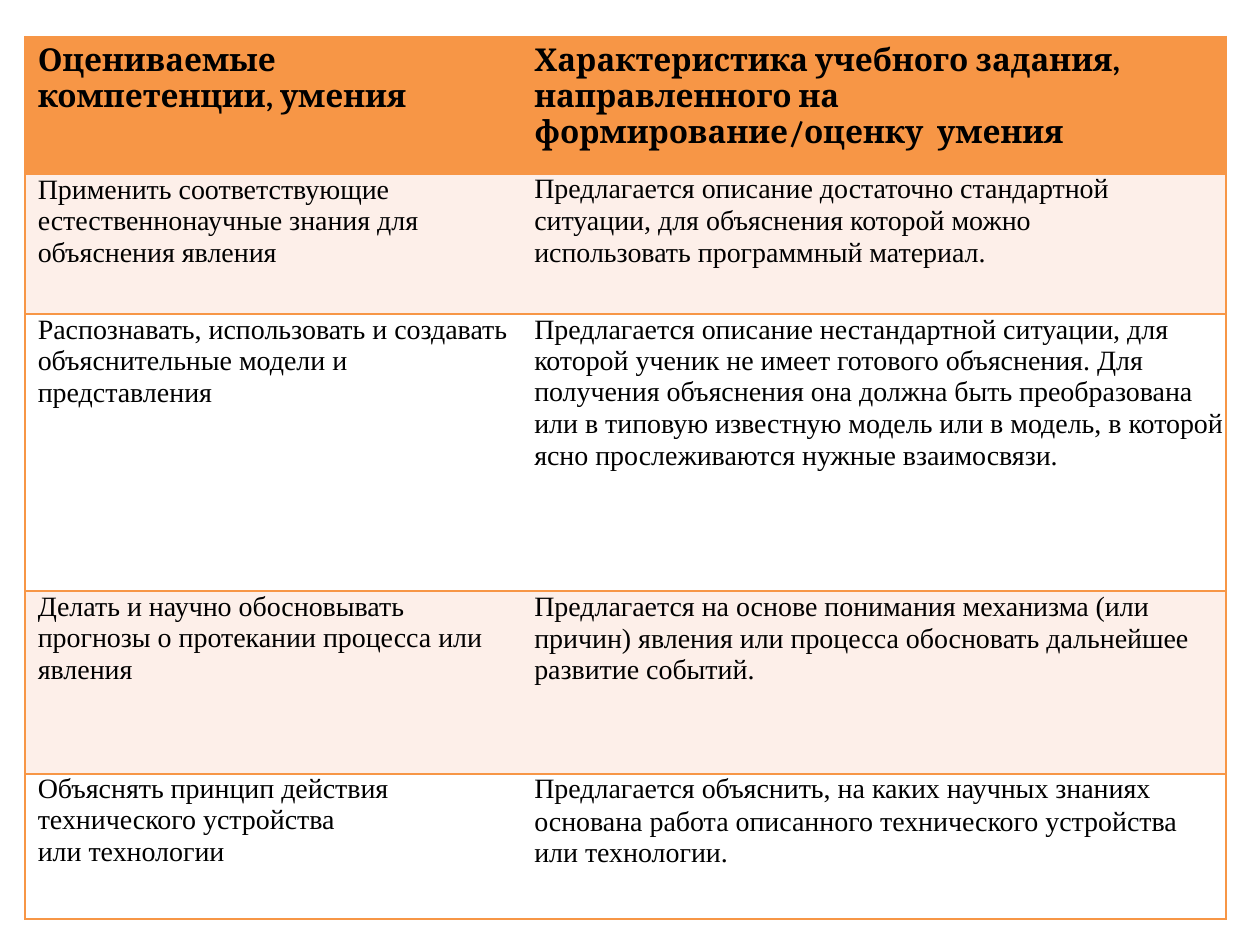
from lxml import etree
from pptx import Presentation
from pptx.dml.color import RGBColor
from pptx.enum.text import MSO_ANCHOR
from pptx.oxml.ns import qn
from pptx.util import Pt

TOP = MSO_ANCHOR.TOP

# Content: each cell is a list of (text, space before, line spacing)
HEAD = ["Оцениваемые компетенции, умения",
        "Характеристика учебного задания, направленного на "
        "формирование/оценку  умения"]
BODY = [
    ([("Применить соответствующие естественнонаучные знания для "
       "объяснения явления", 2.5, 1.01)],
     [("Предлагается описание достаточно стандартной", 2.5, 1),
      ("ситуации, для объяснения которой можно", 0.4, 1),
      ("использовать программный материал.", 0.5, 1)]),
    ([("Распознавать, использовать и создавать объяснительные модели и "
       "представления", 3.5, 1.01)],
     [("Предлагается описание нестандартной ситуации, для которой ученик "
       "не имеет готового объяснения. Для", 3.5, 1.01),
      ("получения объяснения она должна быть преобразована", 0.1, 1),
      ("или в типовую известную модель или в модель, в которой", 0.5, 1),
      ("ясно прослеживаются нужные взаимосвязи.", 0.5, 1)]),
    ([("Делать и научно обосновывать прогнозы о протекании процесса "
       "или явления", 3.6, 1.01)],
     [("Предлагается на основе понимания механизма (или", 3.6, 1),
      ("причин) явления или процесса обосновать дальнейшее развитие "
       "событий.", 0.4, 1.01)]),
    ([("Объяснять принцип действия технического устройства", 3.6, 1),
      ("или технологии", 0.5, 1)],
     [("Предлагается объяснить, на каких научных знаниях", 3.6, 1),
      ("основана работа описанного технического устройства или "
       "технологии.", 0.5, 1.01)]),
]

# Theme and grid
THEME = {"accent": "F79646", "band": "FDEFE9", "plain": "FFFFFF",
         "ink": "000000", "head": ("Cambria", 18), "body": ("Times New Roman", 16)}
LEFT, UP = 14.4, 20.9
COLS = [283.7, 402.5]
ROWS = [78.5, 80, 158.4, 104.4, 83]
INDENT = 7.2


def write(para, text, font, bold=False, before=0, lead=None, indent=0):
    para.space_before = Pt(before)
    if lead:
        para.line_spacing = lead
    props = para._p.get_or_add_pPr()
    props.set("marL", str(Pt(indent)))
    props.set("indent", "0")
    run = para.add_run()
    run.text = text
    run.font.name, size = font
    run.font.size = Pt(size)
    run.font.bold = bold
    run.font.color.rgb = RGBColor.from_string(THEME["ink"])


def edge(cell, side, color):
    line = etree.SubElement(cell._tc.get_or_add_tcPr(), qn("a:ln" + side),
                            w=str(Pt(1)))
    if color:
        fill = etree.SubElement(line, qn("a:solidFill"))
        etree.SubElement(fill, qn("a:srgbClr"), val=color)
    else:
        etree.SubElement(line, qn("a:noFill"))


def dress(cell, col, fill):
    cell.vertical_anchor = TOP
    for side in "LRTB":
        inner = (side, col) in (("R", 0), ("L", 1))
        edge(cell, side, None if inner else THEME["accent"])
    cell.fill.solid()
    cell.fill.fore_color.rgb = RGBColor.from_string(fill)


def main():
    deck = Presentation()
    deck.slide_width, deck.slide_height = Pt(720), Pt(540)
    slide = deck.slides.add_slide(deck.slide_layouts[6])

    # Table frame
    table = slide.shapes.add_table(len(ROWS), len(COLS), Pt(LEFT), Pt(UP),
                                   Pt(sum(COLS)), Pt(sum(ROWS))).table
    for col, width in zip(table.columns, COLS):
        col.width = Pt(width)
    for row, height in zip(table.rows, ROWS):
        row.height = Pt(height)

    # Header row
    for c, text in enumerate(HEAD):
        cell = table.cell(0, c)
        dress(cell, c, THEME["accent"])
        write(cell.text_frame.paragraphs[0], text, THEME["head"], bold=True)

    # Body rows, banded
    for r, row in enumerate(BODY, 1):
        for c, paras in enumerate(row):
            cell = table.cell(r, c)
            cell.margin_left = cell.margin_right = 0
            cell.margin_top = cell.margin_bottom = 0
            dress(cell, c, THEME["band" if r % 2 else "plain"])
            frame = cell.text_frame
            for i, (text, before, lead) in enumerate(paras):
                para = frame.add_paragraph() if i else frame.paragraphs[0]
                write(para, text, THEME["body"], before=before, lead=lead,
                      indent=INDENT)

    deck.save("out.pptx")


if __name__ == "__main__":
    main()
